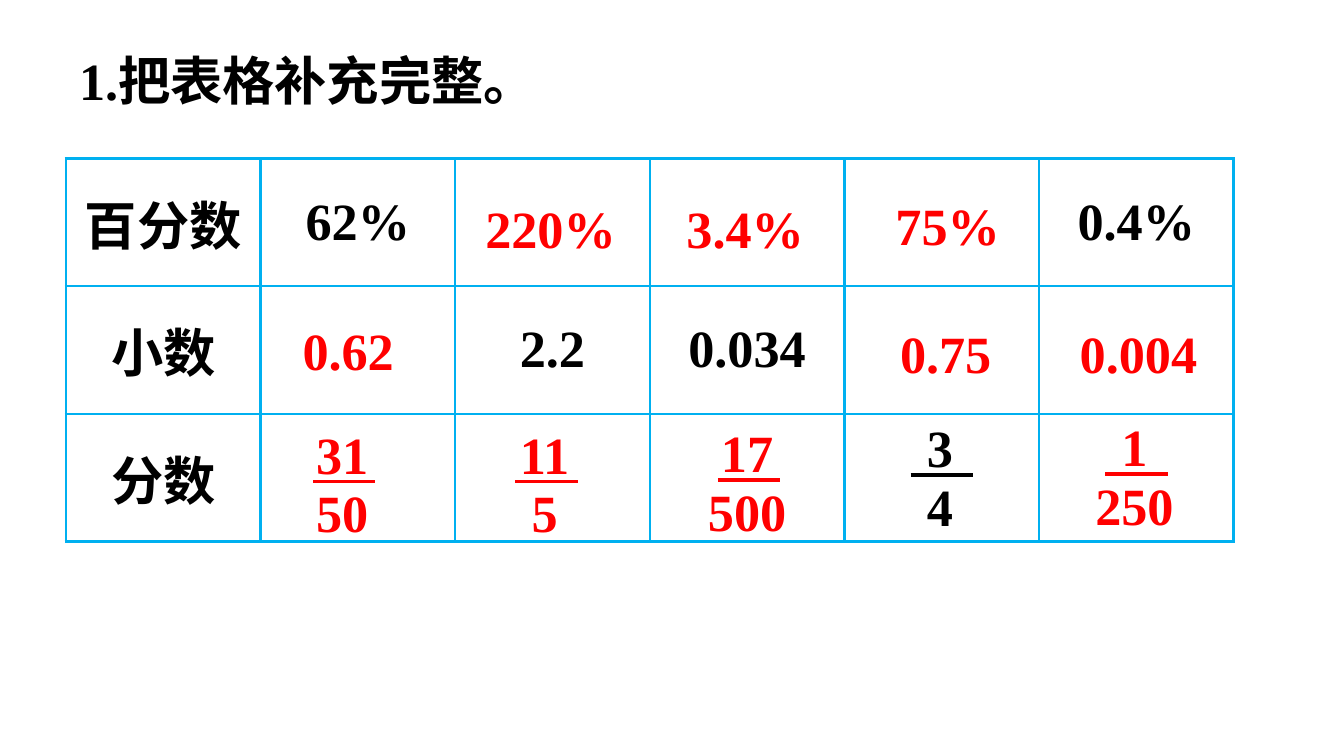
"""Build a practice slide: complete the table of percentages, decimals and fractions."""
import dataclasses

import pptx
import pptx.dml.color
import pptx.enum.shapes
import pptx.enum.text
import pptx.oxml
import pptx.oxml.ns
import pptx.util


@dataclasses.dataclass(frozen=True)
class Theme:
    """Colours, type and line widths."""
    given: str = "000000"
    answer: str = "FF0000"
    grid: str = "00B0F0"
    font: str = "Times New Roman"
    size: int = 28
    grid_width: float = 1.5
    bar_width: float = 2


THEME = Theme()
SLIDE_WIDTH = 10
SLIDE_HEIGHT = SLIDE_WIDTH * 9 / 16
GRID_LEFT, GRID_TOP = 0.49, 1.18
GRID_WIDTH, GRID_HEIGHT = 8.69, 3.06
COLUMN, ROW = GRID_WIDTH / 6, 0.95
BOX_HEIGHT = 0.57
GLYPH_EMS = {"%": 1, ".": 0.25}

TABLE = [
    ["百分数", "62%", "", "", "", "0.4%"],
    ["小数", "", "2.2", "0.034", "", ""],
    ["分数", "", "", "", "", ""],
]
ANSWERS = [
    ("220%", 2.49, 0.54), ("3.4%", 3.49, 0.54), ("75%", 4.53, 0.52),
    ("0.62", 1.45, 1.5), ("0.75", 4.52, 1.52), ("0.004", 5.51, 1.52),
]
FRACTIONS = [
    ("31", "50", 1.42, 2.53, THEME.answer),
    ("11", "5", 2.46, 2.53, THEME.answer),
    ("17", "500", 3.5, 2.52, THEME.answer),
    ("3", "4", 4.49, 2.48, THEME.given),
    ("1", "250", 5.49, 2.47, THEME.answer),
]


def grid_x(column):
    """Return the horizontal place of a column position, in inches."""
    return GRID_LEFT + column * COLUMN


def grid_y(row):
    """Return the vertical place of a row position, in inches."""
    return GRID_TOP + row * ROW


def rgb(colour):
    """Turn a hex string into a colour."""
    return pptx.dml.color.RGBColor.from_string(colour)


def write(frame, text, colour, centred=True):
    """Put one bold line of text into a text frame."""
    paragraph = frame.paragraphs[0]
    paragraph.text = text
    if centred:
        paragraph.alignment = pptx.enum.text.PP_ALIGN.CENTER
    paragraph.font.name = THEME.font
    paragraph.font.size = pptx.util.Pt(THEME.size)
    paragraph.font.bold = True
    paragraph.font.color.rgb = rgb(colour)


def add_text(shapes, text, left, top, width, colour, centred=True):
    """Add a text box that grows with its single line."""
    box = shapes.add_textbox(*map(pptx.util.Inches, (left, top, width, BOX_HEIGHT)))
    box.text_frame.word_wrap = False
    box.text_frame.auto_size = pptx.enum.text.MSO_AUTO_SIZE.SHAPE_TO_FIT_TEXT
    write(box.text_frame, text, colour, centred)


def add_number(shapes, number, column, row, colour):
    """Add a number centred on a grid position."""
    ems = sum(GLYPH_EMS.get(glyph, 0.5) for glyph in number)
    width = ems * THEME.size / 72 + 0.2
    add_text(shapes, number, grid_x(column) - width / 2,
             grid_y(row) - BOX_HEIGHT / 2, width, colour)


def add_fraction(shapes, numerator, denominator, column, row, colour):
    """Add a grouped fraction whose bar lies on a grid row position."""
    parts = shapes.add_group_shape().shapes
    add_number(parts, numerator, column, row - 0.22, colour)
    add_number(parts, denominator, column, row + 0.24, colour)
    start, end = grid_x(column - 0.15), grid_x(column + 0.17)
    bar = parts.add_connector(
        pptx.enum.shapes.MSO_CONNECTOR.STRAIGHT,
        *map(pptx.util.Inches, (start, grid_y(row), end, grid_y(row))))
    bar.line.color.rgb = rgb(colour)
    bar.line.width = pptx.util.Pt(THEME.bar_width)
    properties = bar.element.find(pptx.oxml.ns.qn("p:spPr"))
    properties.append(pptx.oxml.parse_xml(
        f'<a:effectLst {pptx.oxml.ns.nsdecls("a")}/>'))


def add_borders(cell):
    """Draw all four borders of a table cell."""
    properties = cell._tc.get_or_add_tcPr()
    for position, side in enumerate(("lnL", "lnR", "lnT", "lnB")):
        properties.insert(position, pptx.oxml.parse_xml(
            f'<a:{side} {pptx.oxml.ns.nsdecls("a")} w="{pptx.util.Pt(THEME.grid_width)}">'
            f'<a:solidFill><a:srgbClr val="{THEME.grid}"/></a:solidFill></a:{side}>'))


def add_grid(shapes):
    """Add the table with its given values."""
    table = shapes.add_table(len(TABLE), len(TABLE[0]), *map(pptx.util.Inches, (
        GRID_LEFT, GRID_TOP, GRID_WIDTH, GRID_HEIGHT))).table
    table.first_row = table.horz_banding = False
    for row, values in enumerate(TABLE):
        table.rows[row].height = pptx.util.Inches(ROW)
        for column, value in enumerate(values):
            cell = table.cell(row, column)
            cell.fill.background()
            cell.vertical_anchor = pptx.enum.text.MSO_ANCHOR.MIDDLE
            write(cell.text_frame, value, THEME.given)
            add_borders(cell)


def main():
    """Build and save the slide."""
    deck = pptx.Presentation()
    deck.slide_width = pptx.util.Inches(SLIDE_WIDTH)
    deck.slide_height = pptx.util.Inches(SLIDE_HEIGHT)
    shapes = deck.slides.add_slide(deck.slide_layouts[6]).shapes
    add_text(shapes, "1.把表格补充完整。", GRID_LEFT, 0.055 * SLIDE_HEIGHT,
             0.36 * SLIDE_WIDTH, THEME.given, centred=False)
    add_grid(shapes)
    for answer in ANSWERS:
        add_number(shapes, *answer, THEME.answer)
    for fraction in FRACTIONS:
        add_fraction(shapes, *fraction)
    deck.save("out.pptx")


if __name__ == "__main__":
    main()
